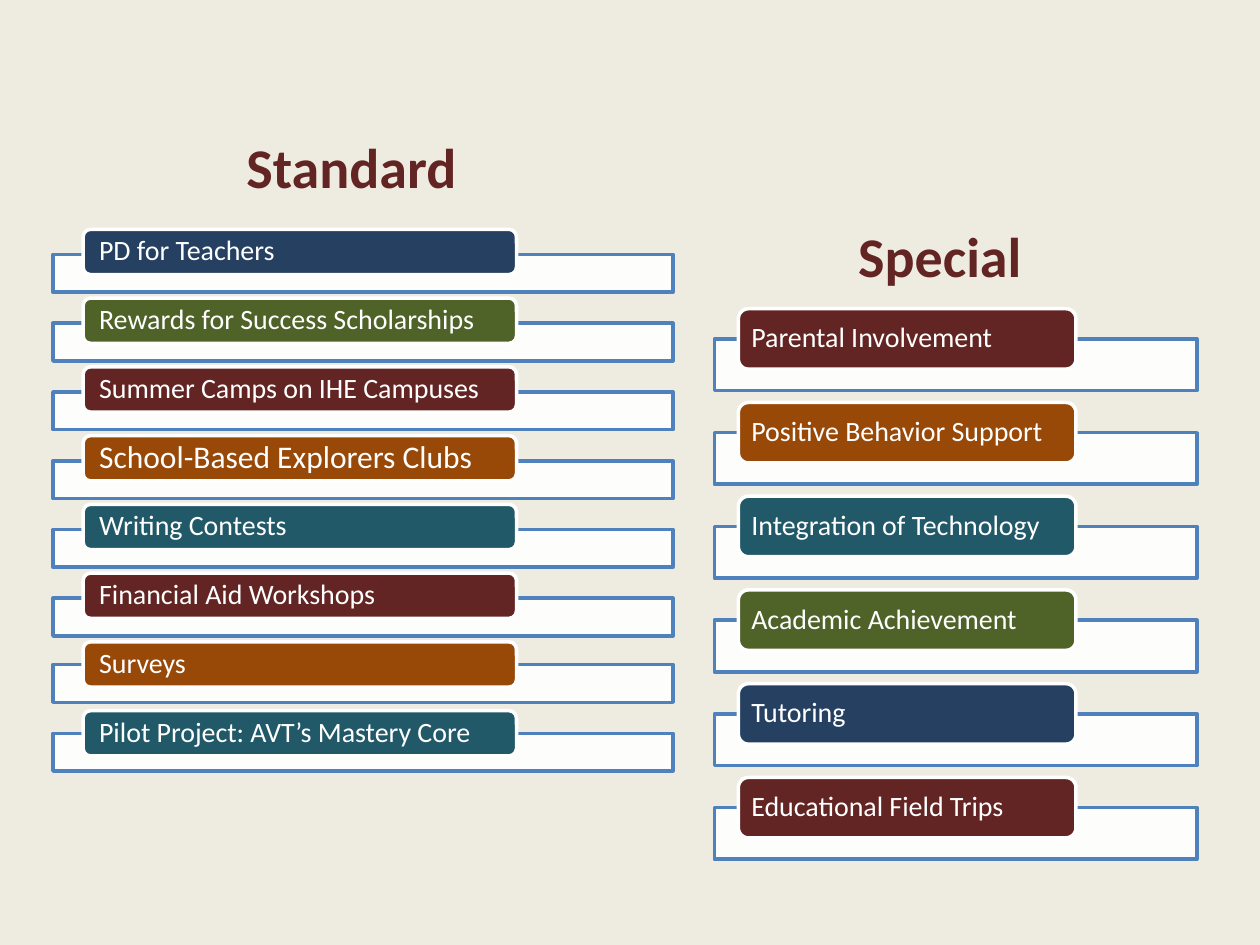
"""Build a slide listing the Standard and Special program activities."""
from dataclasses import dataclass

from lxml import etree
from pptx import Presentation
from pptx import util as u
from pptx.dml.color import RGBColor
from pptx.enum import shapes, text
from pptx.oxml.ns import qn
from pptx.shapes.autoshape import Shape
from pptx.shapes.shapetree import GroupShapes, SlideShapes
from pptx.text.text import _Paragraph

FONT = "Calibri"
WHITE = RGBColor(0xFF, 0xFF, 0xFF)
CREAM = RGBColor(0xEE, 0xEC, 0xE1)
BLUE = RGBColor(0x4F, 0x81, 0xBD)
NAVY = RGBColor(0x25, 0x40, 0x61)
GREEN = RGBColor(0x4F, 0x62, 0x28)
MAROON = RGBColor(0x63, 0x25, 0x23)
ORANGE = RGBColor(0x98, 0x48, 0x07)
TEAL = RGBColor(0x21, 0x59, 0x68)


@dataclass(frozen=True)
class Activity:
    label: str
    color: RGBColor
    size: int = 16
    frame_lift: float = 0


@dataclass(frozen=True)
class Program:
    heading: str
    heading_left: float
    heading_top: float
    frame_left: float
    frame_width: float
    frame_height: float
    frame_drop: float
    bar_left: float
    bar_width: float
    bar_height: float
    first_top: float
    last_top: float
    inset: float
    activities: tuple[Activity, ...]


STANDARD = Program(
    "Standard", 0.25, 1, 0.42, 4.92, 0.3, 0.2, 0.66, 3.44, 0.36, 1.82, 5.64, 0.11,
    (
        Activity("PD for Teachers", NAVY),
        Activity("Rewards for Success Scholarships", GREEN),
        Activity("Summer Camps on IHE Campuses", MAROON),
        Activity("School-Based Explorers Clubs", ORANGE, size=18),
        Activity("Writing Contests", TEAL),
        Activity("Financial Aid Workshops", MAROON),
        Activity("Surveys", ORANGE, frame_lift=0.02),
        Activity("Pilot Project: AVT’s Mastery Core", TEAL, frame_lift=0.02),
    ),
)
SPECIAL = Program(
    "Special", 4.92, 1.71, 5.67, 3.83, 0.41, 0.24, 5.86, 2.68, 0.48, 2.45, 6.17, 0.08,
    (
        Activity("Parental Involvement", MAROON),
        Activity("Positive Behavior Support", ORANGE),
        Activity("Integration of Technology", TEAL),
        Activity("Academic Achievement", GREEN),
        Activity("Tutoring", NAVY),
        Activity("Educational Field Trips", MAROON),
    ),
)


def add_box(parent: GroupShapes, kind: shapes.MSO_SHAPE, left: float, top: float,
            width: float, height: float, fill: RGBColor, line: RGBColor) -> Shape:
    """Add a filled and outlined shape without a shadow."""
    box = parent.add_shape(kind, u.Inches(left), u.Inches(top), u.Inches(width), u.Inches(height))
    box.shadow.inherit = False
    box.fill.solid()
    box.fill.fore_color.rgb = fill
    box.line.color.rgb = line
    box.line.width = u.Pt(2)
    return box


def add_run(paragraph: _Paragraph, words: str, size: int, color: RGBColor, bold: bool = False) -> None:
    """Add one styled run to a paragraph."""
    run = paragraph.add_run()
    run.text = words
    run.font.name = FONT
    run.font.size = u.Pt(size)
    run.font.bold = bold
    run.font.color.rgb = color


def draw_activity(parent: GroupShapes, program: Program, activity: Activity, top: float) -> None:
    """Draw an activity's open frame and the labelled bar over it."""
    frame = add_box(parent, shapes.MSO_SHAPE.RECTANGLE, program.frame_left,
                    top + program.frame_drop - activity.frame_lift,
                    program.frame_width, program.frame_height, WHITE, BLUE)
    fill_color = frame.fill._xPr.find(qn("a:solidFill"))[0]
    etree.SubElement(fill_color, qn("a:alpha")).set("val", "90000")

    bar = add_box(parent, shapes.MSO_SHAPE.ROUNDED_RECTANGLE, program.bar_left, top,
                  program.bar_width, program.bar_height, activity.color, WHITE)
    label = bar.text_frame
    label.word_wrap = True
    label.vertical_anchor = text.MSO_ANCHOR.MIDDLE
    label.margin_left = label.margin_right = u.Inches(program.inset)
    label.margin_top = label.margin_bottom = 0
    paragraph = label.paragraphs[0]
    paragraph.alignment = text.PP_ALIGN.LEFT
    paragraph.line_spacing = 0.9
    add_run(paragraph, activity.label, activity.size, WHITE)


def draw_program(parent: SlideShapes, program: Program) -> None:
    """Draw a program's evenly spaced activities and its heading."""
    group = parent.add_group_shape()
    step = (program.last_top - program.first_top) / (len(program.activities) - 1)
    for row, activity in enumerate(program.activities):
        draw_activity(group.shapes, program, activity, program.first_top + row * step)

    heading = parent.add_textbox(u.Inches(program.heading_left), u.Inches(program.heading_top),
                                 u.Inches(5.08), u.Inches(0.64)).text_frame
    heading.word_wrap = True
    heading.paragraphs[0].alignment = text.PP_ALIGN.CENTER
    add_run(heading.paragraphs[0], program.heading, 32, MAROON, bold=True)


def main() -> None:
    """Build and save the slide."""
    deck = Presentation()
    deck.slide_width = u.Inches(10)
    deck.slide_height = u.Inches(7.5)
    slide = deck.slides.add_slide(deck.slide_layouts[6])
    slide.background.fill.solid()
    slide.background.fill.fore_color.rgb = CREAM
    for program in (STANDARD, SPECIAL):
        draw_program(slide.shapes, program)
    deck.save("out.pptx")


if __name__ == "__main__":
    main()
